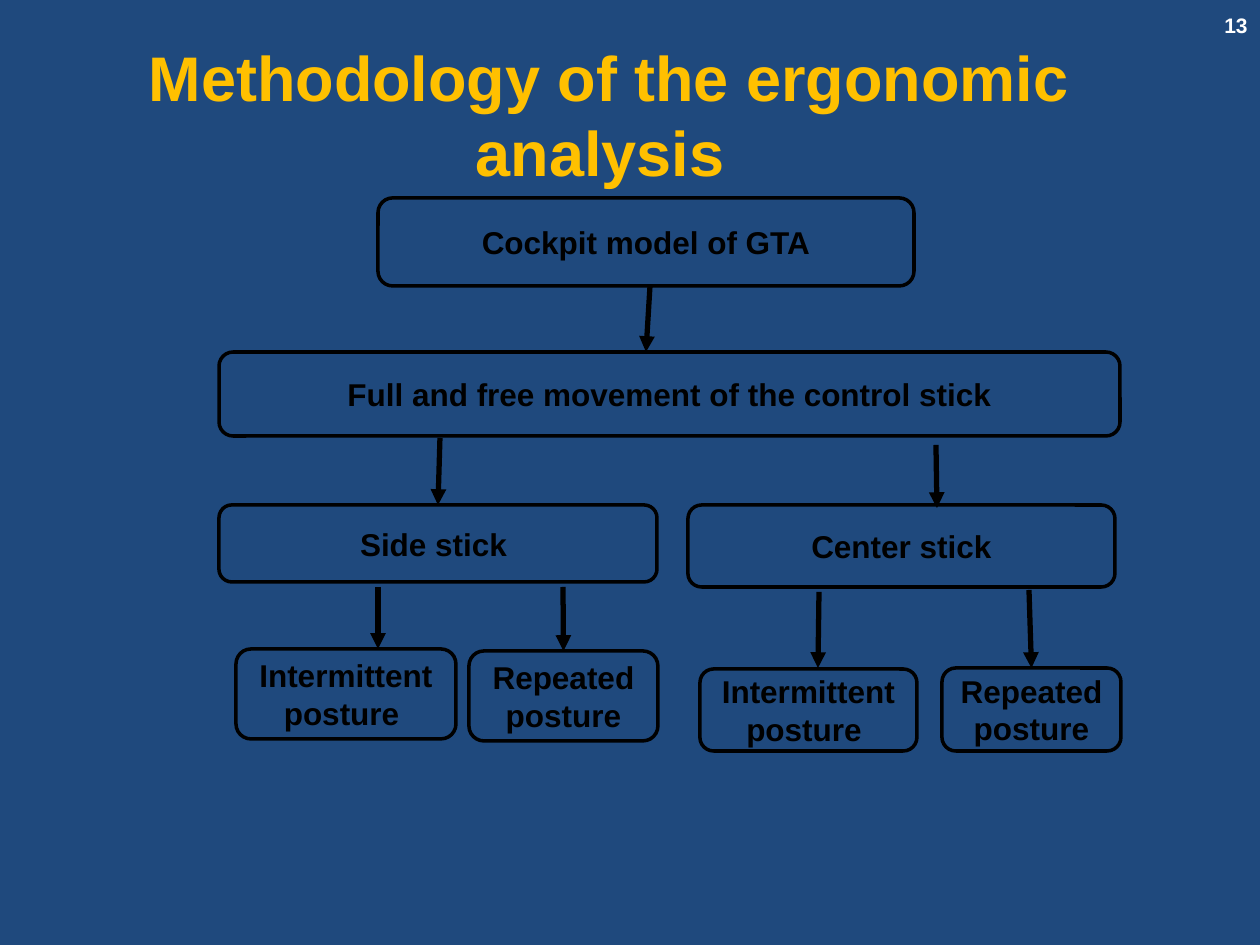
from dataclasses import dataclass

from lxml.etree import SubElement
from pptx import Presentation
from pptx.dml.color import RGBColor
from pptx.enum.shapes import MSO_CONNECTOR, MSO_SHAPE
from pptx.enum.text import MSO_ANCHOR, PP_ALIGN
from pptx.oxml.ns import qn
from pptx.util import Emu, Pt

EMU_PER_PX = 914400 / 126
TOP = 0  # connection site


@dataclass(frozen=True)
class Theme:
    font: str = "Arial"
    background: RGBColor = RGBColor(0x1F, 0x49, 0x7D)
    title: RGBColor = RGBColor(0xFF, 0xC0, 0x00)
    number: RGBColor = RGBColor(0xFF, 0xFF, 0xFF)
    ink: RGBColor = RGBColor(0, 0, 0)
    title_size: int = 36
    box_size: int = 18
    number_size: int = 12
    box_line: int = 2
    arrow_line: int = 3


THEME = Theme()

# Flow chart steps: text, left, top, width, height
BOXES = {
    "cockpit": ("Cockpit model of GTA", 378, 198, 536, 88),
    "movement": ("Full and free movement of the control stick", 219, 352, 901, 84),
    "side": ("Side stick ", 219, 505, 438, 77),
    "center": ("Center stick", 688, 505, 427, 82),
    "side intermittent": ("Intermittent posture ", 236, 649, 220, 90),
    "side repeated": ("Repeated posture", 469, 651, 189, 90),
    "center intermittent": ("Intermittent posture ", 700, 669, 217, 82),
    "center repeated": ("Repeated posture", 942, 668, 179, 83),
}

# Arrows: start, end, and the box whose top middle the arrow meets, if any
ARROWS = [
    ((650, 286), (646, 352), None),
    ((440, 438), (438, 505), "side"),
    ((936, 445), (937, 508), None),
    ((378, 587), (378, 649), None),
    ((563, 587), (563, 651), "side repeated"),
    ((819, 592), (818, 668), None),
    ((1029, 590), (1032, 668), "center repeated"),
]


def px(value):
    return Emu(round(value * EMU_PER_PX))


def write_text(shape, text, size, color, alignment=PP_ALIGN.CENTER):
    frame = shape.text_frame
    frame.word_wrap = True
    frame.vertical_anchor = MSO_ANCHOR.MIDDLE
    paragraph = frame.paragraphs[0]
    paragraph.alignment = alignment
    run = paragraph.add_run()
    run.text = text
    run.font.name = THEME.font
    run.font.size = Pt(size)
    run.font.bold = True
    run.font.color.rgb = color


def add_title(slide, text, left, top, width, height):
    title = slide.shapes.title
    title.left, title.top = px(left), px(top)
    title.width, title.height = px(width), px(height)
    write_text(title, text, THEME.title_size, THEME.title)


def add_slide_number(slide, text, left, top, width, height):
    number = slide.shapes.add_textbox(px(left), px(top), px(width), px(height))
    write_text(number, text, THEME.number_size, THEME.number, PP_ALIGN.RIGHT)


def add_box(slide, text, left, top, width, height):
    box = slide.shapes.add_shape(
        MSO_SHAPE.ROUNDED_RECTANGLE, px(left), px(top), px(width), px(height)
    )
    box.shadow.inherit = False
    box.fill.background()
    box.line.color.rgb = THEME.ink
    box.line.width = Pt(THEME.box_line)
    write_text(box, text, THEME.box_size, THEME.ink)
    return box


def add_arrow(slide, start, end, target=None):
    arrow = slide.shapes.add_connector(
        MSO_CONNECTOR.STRAIGHT, *map(px, start), *map(px, end)
    )
    if target is not None:
        arrow.end_connect(target, TOP)
    arrow.line.color.rgb = THEME.ink
    arrow.line.width = Pt(THEME.arrow_line)
    SubElement(arrow.line._get_or_add_ln(), qn("a:tailEnd"), type="triangle")
    SubElement(arrow._element.spPr, qn("a:effectLst"))


def main():
    presentation = Presentation()
    presentation.slide_width, presentation.slide_height = px(1260), px(945)
    slide = presentation.slides.add_slide(presentation.slide_layouts[5])
    slide.background.fill.solid()
    slide.background.fill.fore_color.rgb = THEME.background

    # Heading and slide number
    add_title(slide, "Methodology of the ergonomic analysis ", 42, 35, 1134, 158)
    add_slide_number(slide, "13", 1176, 0, 84, 50)

    # Flow chart
    boxes = {name: add_box(slide, *box) for name, box in BOXES.items()}
    for start, end, target in ARROWS:
        add_arrow(slide, start, end, boxes.get(target))

    presentation.save("out.pptx")


if __name__ == "__main__":
    main()
